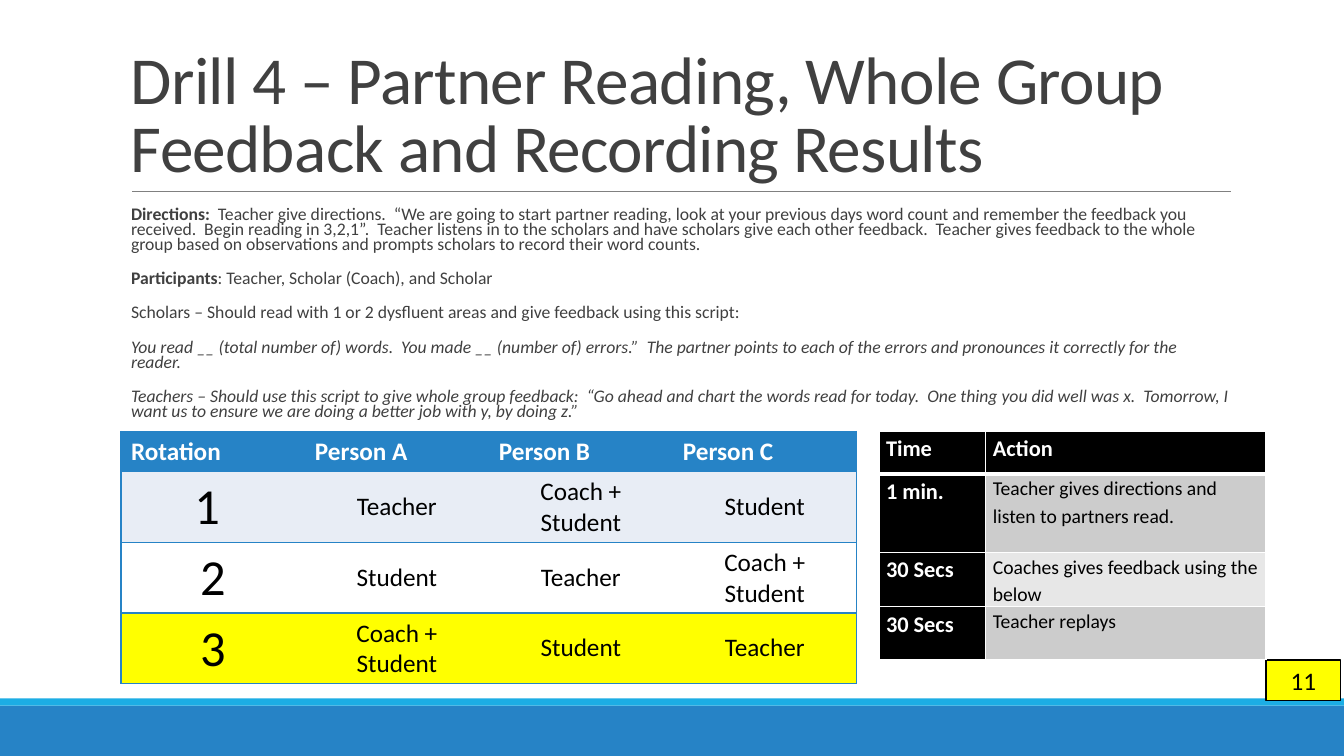
from dataclasses import dataclass
from typing import Optional

from lxml.etree import SubElement
from pptx import Presentation
from pptx.dml.color import RGBColor
from pptx.enum.shapes import MSO_CONNECTOR, MSO_SHAPE
from pptx.enum.text import MSO_ANCHOR, PP_ALIGN
from pptx.oxml.ns import qn
from pptx.util import Inches, Pt

FONT = "Calibri"
BLUE, CYAN, GREY = "2683C6", "1CADE4", "404040"
BLACK, WHITE, YELLOW = "000000", "FFFFFF", "FFFF00"
COLUMNS, ROWS = 133.33, 75  # grid modules of a tenth of an inch


@dataclass
class Area:
    """A box in grid columns and rows."""
    column: float
    row: float
    columns: float
    rows: float

    def box(self) -> tuple:
        return tuple(grid(n) for n in (self.column, self.row, self.columns, self.rows))


@dataclass
class Run:
    text: str
    size: float
    color: str = GREY
    bold: bool = False
    italic: bool = False


@dataclass
class Cell:
    run: Run
    fill: str
    align: PP_ALIGN = PP_ALIGN.LEFT
    anchor: MSO_ANCHOR = MSO_ANCHOR.TOP


@dataclass
class Edge:
    color: str
    width: float


@dataclass
class TableDesign:
    """Edges and text layout shared by the cells of one table."""
    outer: Edge
    horizontal: Edge
    vertical: Optional[Edge] = None
    header_rule: Optional[Edge] = None
    margins: tuple = (1, 0.5)
    line_spacing: float = 1.0


def grid(modules: float) -> int:
    return Inches(modules / 10)


def rgb(color: str) -> RGBColor:
    return RGBColor.from_string(color)


def add_run(paragraph, content: Run):
    run = paragraph.add_run()
    run.text = content.text
    font = run.font
    font.name, font.size = FONT, Pt(content.size)
    font.bold, font.italic = content.bold, content.italic
    font.color.rgb = rgb(content.color)
    return run


def add_rectangle(slide, area: Area, fill: str, outline: Optional[Edge] = None):
    shape = slide.shapes.add_shape(MSO_SHAPE.RECTANGLE, *area.box())
    shape.shadow.inherit = False
    shape.fill.solid()
    shape.fill.fore_color.rgb = rgb(fill)
    if outline:
        shape.line.color.rgb = rgb(outline.color)
        shape.line.width = Pt(outline.width)
    else:
        shape.line.fill.background()
    return shape


def add_title_rule(slide) -> None:
    y = grid(19)
    rule = slide.shapes.add_connector(MSO_CONNECTOR.STRAIGHT, grid(13.1), y, grid(122.1), y)
    rule.line.color.rgb = rgb("808080")
    rule.line.width = Pt(0.5)
    SubElement(rule._element.spPr, qn("a:effectLst"))


def add_title(slide, text: str) -> None:
    frame = slide.shapes.add_textbox(*Area(12, 3.1, 110, 15.9).box()).text_frame
    frame.word_wrap = True
    frame.vertical_anchor = MSO_ANCHOR.BOTTOM
    paragraph = frame.paragraphs[0]
    paragraph.line_spacing = 0.85
    run = add_run(paragraph, Run(text, 48))
    run.font._element.set("spc", "-50")


def add_instructions(slide, paragraphs: list[list[Run]]) -> None:
    frame = slide.shapes.add_textbox(*Area(12, 20.2, 110, 22.7).box()).text_frame
    frame.word_wrap = True
    frame.margin_left = frame.margin_right = 0
    for index, runs in enumerate(paragraphs):
        paragraph = frame.add_paragraph() if index else frame.paragraphs[0]
        paragraph.line_spacing = 0.7
        paragraph.space_before, paragraph.space_after = Pt(12), Pt(2)
        properties = paragraph._p.get_or_add_pPr()
        properties.set("marL", str(grid(1)))
        properties.set("indent", str(-grid(1)))
        SubElement(properties, qn("a:buChar"), char=" ")
        for run in runs:
            add_run(paragraph, run)


def set_edge(cell, tag: str, edge: Optional[Edge]) -> None:
    line = SubElement(cell._tc.get_or_add_tcPr(), qn(tag))
    if edge:
        line.set("w", str(Pt(edge.width)))
        SubElement(SubElement(line, qn("a:solidFill")), qn("a:srgbClr"), val=edge.color)
    else:
        line.set("w", "0")
        SubElement(line, qn("a:noFill"))


def add_grid_table(slide, column: float, row: float, widths: list[float],
                   heights: list[float], rows: list[list[Cell]], design: TableDesign) -> None:
    area = Area(column, row, sum(widths), sum(heights))
    table = slide.shapes.add_table(len(heights), len(widths), *area.box()).table
    table.first_row = table.horz_banding = False
    for table_column, width in zip(table.columns, widths):
        table_column.width = grid(width)
    for table_row, height in zip(table.rows, heights):
        table_row.height = grid(height)
    last_row, last_column = len(heights) - 1, len(widths) - 1
    header_rule = design.header_rule or design.horizontal
    for r, contents in enumerate(rows):
        for c, content in enumerate(contents):
            cell = table.cell(r, c)
            set_edge(cell, "a:lnL", design.vertical if c else design.outer)
            set_edge(cell, "a:lnR", design.outer if c == last_column else design.vertical)
            set_edge(cell, "a:lnT", (design.outer, header_rule)[r] if r < 2 else design.horizontal)
            set_edge(cell, "a:lnB", design.outer if r == last_row
                     else design.horizontal if r else header_rule)
            cell.fill.solid()
            cell.fill.fore_color.rgb = rgb(content.fill)
            cell.margin_left = cell.margin_right = grid(design.margins[0])
            cell.margin_top = cell.margin_bottom = grid(design.margins[1])
            cell.vertical_anchor = content.anchor
            paragraph = cell.text_frame.paragraphs[0]
            paragraph.alignment = content.align
            paragraph.line_spacing = design.line_spacing
            add_run(paragraph, content.run)


def add_rotation_table(slide) -> None:
    headings = ["Rotation", "Person A", "Person B", "Person C"]
    rotations = [
        ("E8EDF5", ["1 ", "Teacher", "Coach + Student", "Student"]),
        (WHITE, ["2", "Student", "Teacher", "Coach + Student"]),
        (YELLOW, ["3", "Coach + Student", "Student", "Teacher"]),
    ]
    rows = [[Cell(Run(text, 18, WHITE, bold=True), BLUE) for text in headings]]
    rows += [[Cell(Run(text, 18 if c else 36, BLACK), fill, PP_ALIGN.CENTER, MSO_ANCHOR.MIDDLE)
              for c, text in enumerate(texts)] for fill, texts in rotations]
    edge = Edge(BLUE, 1)
    add_grid_table(slide, 12, 42.8, [18.25] * 4, [4] + [7] * 3, rows, TableDesign(edge, edge))


def add_timing_table(slide) -> None:
    steps = [
        ("1 min.", "Teacher gives directions and listen to partners read.", "CCCCCC"),
        ("30 Secs", "Coaches gives feedback using the below", "E7E7E7"),
        ("30 Secs", "Teacher replays", "CCCCCC"),
    ]
    rows = [[Cell(Run(text, 16, WHITE, bold=True), BLACK) for text in ("Time", "Action")]]
    rows += [[Cell(Run(time, 16, WHITE, bold=True), BLACK), Cell(Run(action, 14, BLACK), fill)]
             for time, action, fill in steps]
    edge = Edge(WHITE, 1)
    design = TableDesign(edge, edge, edge, Edge(WHITE, 3), (0.7, 0), 1.15)
    add_grid_table(slide, 87.2, 42.8, [10.6, 27.8], [4.2, 7.8, 5.4, 5.2], rows, design)


def main() -> None:
    presentation = Presentation()
    presentation.slide_width, presentation.slide_height = grid(COLUMNS), grid(ROWS)
    slide = presentation.slides.add_slide(presentation.slide_layouts[6])
    add_rectangle(slide, Area(0, 70, COLUMNS, 5), BLUE)
    add_rectangle(slide, Area(0, 69.3, COLUMNS, 0.7), CYAN)
    add_title_rule(slide)
    add_title(slide, "Drill 4 – Partner Reading, Whole Group Feedback and Recording Results")
    size = 12.6
    add_instructions(slide, [
        [Run("Directions:  ", size, bold=True),
         Run("Teacher give directions.  “We are going to start partner reading, look at your previous days word count and remember the feedback you received.  Begin reading in 3,2,1”.  Teacher listens in to the scholars and have scholars give each other feedback.  Teacher gives feedback to the whole group based on observations and prompts scholars to record their word counts.", size)],
        [Run("Participants", size, bold=True), Run(": Teacher, Scholar (Coach), and Scholar", size)],
        [Run("Scholars – Should read with 1 or 2 dysfluent areas and give feedback using this script:", size)],
        [Run("You read __ (total number of) words.  You made __ (number of) errors.”  The partner points to each of the errors and pronounces it correctly for the reader.", size, italic=True)],
        [Run("Teachers – Should use this script to give whole group feedback:  “Go ahead and chart the words read for today.  One thing you did well was x.  Tomorrow, I want us to ensure we are doing a better job with y, by doing z.”", size, italic=True)],
    ])
    page_number = add_rectangle(slide, Area(125.6, 65.5, 7.4, 4), YELLOW, Edge(BLACK, 1.25))
    paragraph = page_number.text_frame.paragraphs[0]
    paragraph.alignment = PP_ALIGN.CENTER
    add_run(paragraph, Run("11", 18, BLACK))
    add_rotation_table(slide)
    add_timing_table(slide)
    presentation.save("out.pptx")


if __name__ == "__main__":
    main()
